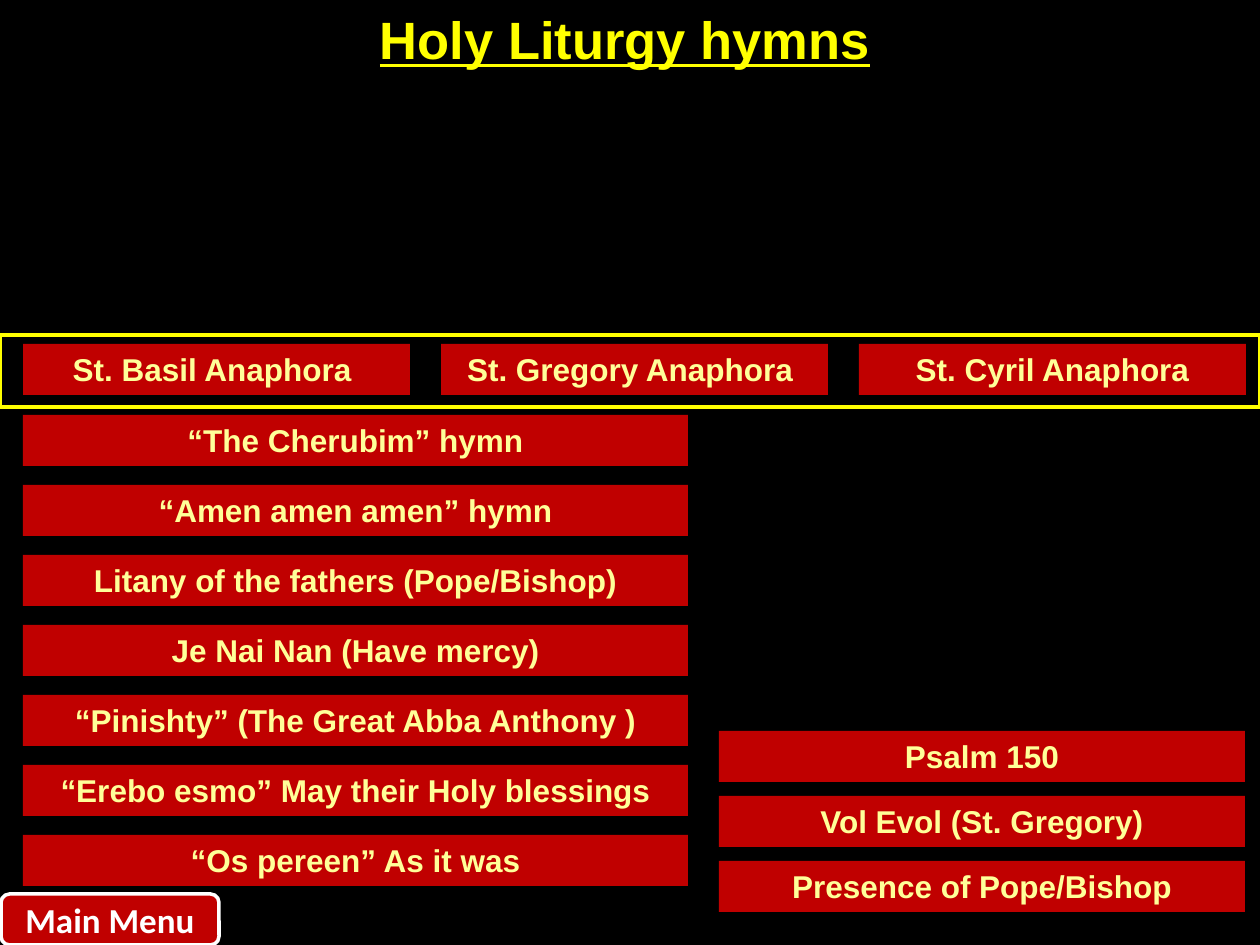
from dataclasses import dataclass

from pptx import Presentation
from pptx.dml.color import RGBColor as RGB
from pptx.enum.shapes import MSO_SHAPE as Shape
from pptx.enum.text import MSO_ANCHOR as Anchor, MSO_AUTO_SIZE as AutoSize, PP_ALIGN as Align
from pptx.util import Emu, Pt

EMU_PER_PX = 914400 / 126
NO_STYLE = "{2D5ABB26-0587-4C30-8999-92F81FD0307C}"


@dataclass(frozen=True)
class Theme:
    black: RGB = RGB(0, 0, 0)
    yellow: RGB = RGB(255, 255, 0)
    cream: RGB = RGB(255, 255, 153)
    red: RGB = RGB(192, 0, 0)
    white: RGB = RGB(255, 255, 255)
    line: int = 2
    title: int = 30
    button: int = 18
    menu: int = 20


T = Theme()
TITLE = dict(name="Arial", size=Pt(T.title), bold=True, underline=True)
BUTTON = dict(name="Arial", size=Pt(T.button), bold=True)
MENU = dict(name="Calibri", size=Pt(T.menu), bold=True)

ANAPHORAS = ["St. Basil Anaphora ", "St. Gregory Anaphora ", "St. Cyril Anaphora"]
HYMNS = [
    "“The Cherubim” hymn",
    "“Amen amen amen” hymn",
    "Litany of the fathers (Pope/Bishop)",
    "Je Nai Nan (Have mercy)",
    "“Pinishty” (The Great Abba Anthony )",
    "“Erebo esmo” May their Holy blessings",
    "“Os pereen” As it was",
]
CLOSING = ["Psalm 150", "Vol Evol (St. Gregory)", "Presence of Pope/Bishop"]


def px(*values):
    return [Emu(round(v * EMU_PER_PX)) for v in values]


def write(tf, text, color, fmt):
    p = tf.paragraphs[0]
    p.alignment = Align.CENTER
    r = p.add_run()
    r.text = text
    for key, value in fmt.items():
        setattr(r.font, key, value)
    r.font.color.rgb = color


def add_box(s, box, kind=Shape.RECTANGLE, fill=None, line=None):
    sp = s.shapes.add_shape(kind, *px(*box))
    sp.shadow.inherit = False
    if fill is None:
        sp.fill.background()
    else:
        sp.fill.solid()
        sp.fill.fore_color.rgb = fill
    if line is None:
        sp.line.fill.background()
    else:
        sp.line.color.rgb = line
        sp.line.width = Pt(T.line)
    return sp


def add_buttons(s, labels, box, dx=0, dy=0):
    """Place one button per label, each moved by dx, dy from the one before."""
    x, y, w, h = box
    for i, label in enumerate(labels):
        tf = add_box(s, (x + i * dx, y + i * dy, w, h), fill=T.red).text_frame
        tf.word_wrap = True
        tf.auto_size = AutoSize.SHAPE_TO_FIT_TEXT
        tf.vertical_anchor = Anchor.TOP
        write(tf, label, T.cream, BUTTON)


def add_title(s, text, box):
    table = s.shapes.add_table(1, 1, *px(*box)).table
    table.first_row = table.horz_banding = False
    table._tbl.tblPr.find("{*}tableStyleId").text = NO_STYLE
    cell = table.cell(0, 0)
    cell.fill.background()
    write(cell.text_frame, text, T.yellow, TITLE)


def add_menu_button(s, text, box):
    sp = add_box(s, box, Shape.ROUNDED_RECTANGLE, T.red, T.white)
    sp.text_frame.vertical_anchor = Anchor.MIDDLE
    write(sp.text_frame, text, T.white, MENU)


def main():
    prs = Presentation()
    prs.slide_width, prs.slide_height = px(1260, 945)
    s = prs.slides.add_slide(prs.slide_layouts[6])
    s.background.fill.solid()
    s.background.fill.fore_color.rgb = T.black

    add_box(s, (0, 335, 1260, 72), line=T.yellow)
    add_title(s, "Holy Liturgy hymns", (44, 6, 1162, 110))
    add_buttons(s, ANAPHORAS, (23, 344, 387, 51), dx=418)
    add_buttons(s, HYMNS, (23, 415, 665, 51), dy=70)
    add_buttons(s, CLOSING, (719, 731, 526, 51), dy=65)
    add_menu_button(s, "Main Menu", (1, 894, 218, 51))
    prs.save("out.pptx")


if __name__ == "__main__":
    main()
